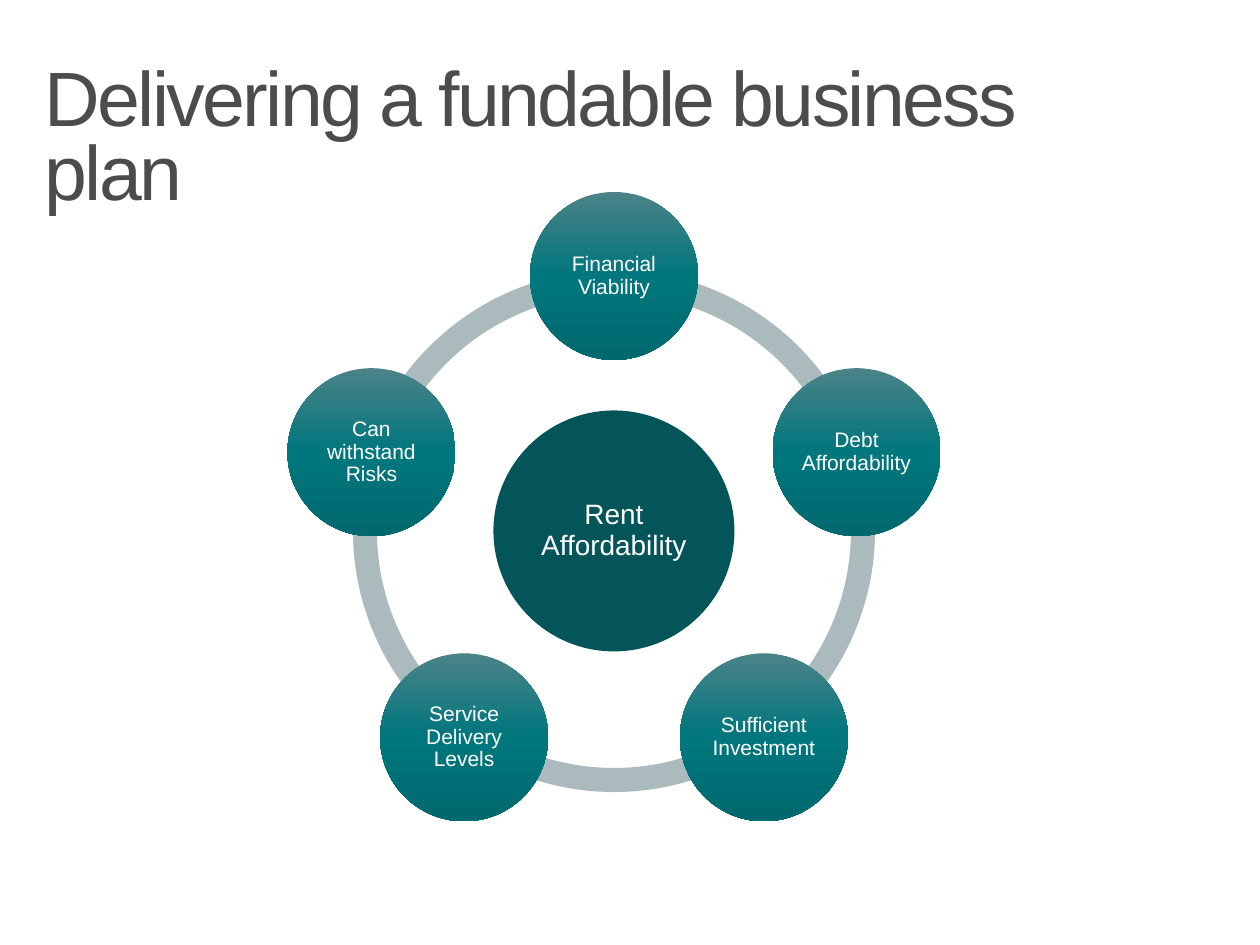
import copy
import math

import pptx
import pptx.dml.color
import pptx.enum.shapes
import pptx.enum.text
import pptx.oxml.ns
import pptx.util

RGB = pptx.dml.color.RGBColor
SHAPE = pptx.enum.shapes.MSO_SHAPE
ALIGN = pptx.enum.text.PP_ALIGN
ANCHOR = pptx.enum.text.MSO_ANCHOR

WHITE = RGB(0xFF, 0xFF, 0xFF)
TITLE_GREY = RGB(0x4C, 0x4C, 0x4C)
RING_GREY = RGB(0xAB, 0xBB, 0xBD)
CORE_TEAL = RGB(0x04, 0x55, 0x59)
NODE_STOPS = [
    (0, RGB(0x4B, 0x83, 0x88)),
    (0.5, RGB(0x00, 0x76, 0x7D)),
    (1, RGB(0x00, 0x69, 0x6F)),
]

FONT = "Arial"
PX_PER_INCH = 126
FACTORS = [
    "Financial Viability",
    "Debt Affordability",
    "Sufficient Investment",
    "Service Delivery Levels",
    "Can withstand Risks",
]


def px(n):
    return pptx.util.Emu(round(n * 914400 / PX_PER_INCH))


def style_run(r, size, color):
    r.font.name = FONT
    r.font.size = pptx.util.Pt(size)
    r.font.color.rgb = color


def add_title(slide, text, left, top, width, height):
    sp = slide.shapes.title
    sp.left, sp.top, sp.width, sp.height = map(px, (left, top, width, height))
    tf = sp.text_frame
    tf.text = text
    tf.word_wrap = True
    tf.vertical_anchor = ANCHOR.BOTTOM
    p = tf.paragraphs[0]
    p.alignment = ALIGN.LEFT
    p.line_spacing = 0.8
    r = p.runs[0]
    style_run(r, 44, TITLE_GREY)
    r.font._element.set("spc", "-150")


def add_round(slide, kind, cx, cy, diameter):
    """Add a borderless shape in a square box centred on (cx, cy)."""
    sp = slide.shapes.add_shape(
        kind, px(cx - diameter / 2), px(cy - diameter / 2), px(diameter), px(diameter))
    sp.shadow.inherit = False
    sp.line.fill.background()
    return sp


def fill_solid(sp, color):
    sp.fill.solid()
    sp.fill.fore_color.rgb = color


def fill_node_gradient(sp):
    sp.fill.gradient()
    sp.fill.gradient_angle = 270
    gs_list = sp._element.spPr.find(".//" + pptx.oxml.ns.qn("a:gsLst"))
    gs_list.append(copy.deepcopy(gs_list[-1]))
    for stop, (position, color) in zip(sp.fill.gradient_stops, NODE_STOPS):
        stop.color.rgb = color
        stop.position = position


def set_label(sp, text, size):
    tf = sp.text_frame
    tf.text = text
    tf.word_wrap = True
    tf.vertical_anchor = ANCHOR.MIDDLE
    tf.margin_left = tf.margin_top = tf.margin_right = tf.margin_bottom = px(2)
    p = tf.paragraphs[0]
    p.alignment = ALIGN.CENTER
    p.line_spacing = 0.9
    style_run(p.runs[0], size, WHITE)


def add_radial_cycle(slide, core_text, labels, left, top, ring):
    """Draw a ring of the given diameter with a core and evenly spaced nodes."""
    cx, cy = left + ring / 2, top + ring / 2
    orbit, node, core = 255, 168, 241
    step = 360 / len(labels)
    angles = [(270 + i * step) % 360 for i in range(len(labels))]

    for angle in angles:
        arc = add_round(slide, SHAPE.BLOCK_ARC, cx, cy, ring)
        # Angles are stored in 60000ths of a degree, adjustments in 100000ths.
        arc.adjustments[0] = angle * 0.6
        arc.adjustments[1] = (angle + step) % 360 * 0.6
        arc.adjustments[2] = 0.046
        fill_solid(arc, RING_GREY)

    sp = add_round(slide, SHAPE.OVAL, cx, cy, core)
    fill_solid(sp, CORE_TEAL)
    set_label(sp, core_text, 16)

    for angle, label in zip(angles, labels):
        a = math.radians(angle)
        sp = add_round(slide, SHAPE.OVAL, cx + orbit * math.cos(a), cy + orbit * math.sin(a), node)
        fill_node_gradient(sp)
        set_label(sp, label, 12)


def main():
    prs = pptx.Presentation()
    prs.slide_width = pptx.util.Inches(10)
    prs.slide_height = pptx.util.Inches(7.5)
    slide = prs.slides.add_slide(prs.slide_layouts[5])
    add_title(slide, "Delivering a fundable business plan", 32, 59, 1104, 163)
    add_radial_cycle(slide, "Rent Affordability", FACTORS, 353, 270, 522)
    prs.save("out.pptx")


if __name__ == "__main__":
    main()
